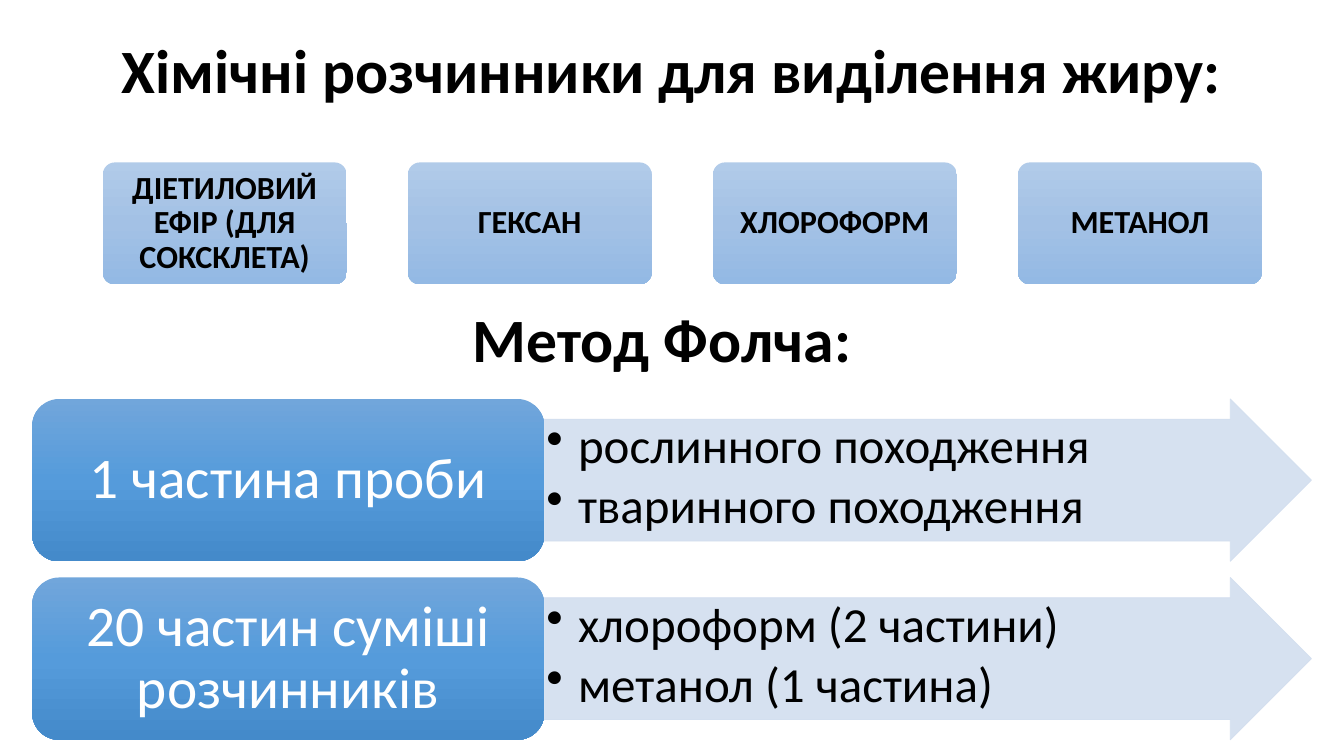
from copy import deepcopy
from lxml.etree import SubElement
from pptx import Presentation
from pptx.dml.color import RGBColor
from pptx.enum.shapes import MSO_SHAPE as Kind
from pptx.enum.text import MSO_ANCHOR as Anchor, MSO_AUTO_SIZE as Auto, PP_ALIGN as Align
from pptx.oxml.ns import qn
from pptx.util import Pt

BLACK = RGBColor(0x00, 0x00, 0x00)
WHITE = RGBColor(0xFF, 0xFF, 0xFF)
LIGHT = [RGBColor(0xB1, 0xCB, 0xE9), RGBColor(0xA3, 0xC1, 0xE5), RGBColor(0x93, 0xB9, 0xE4)]
DEEP = [RGBColor(0x71, 0xA6, 0xDB), RGBColor(0x55, 0x9B, 0xDB), RGBColor(0x44, 0x8A, 0xCA)]
PALE = RGBColor(0xD2, 0xDE, 0xEF)


def write(shape, text, size, color, bold=False, pad=(7.2, 3.6), list_gap=None):
    frame = shape.text_frame
    frame.text = text
    frame.word_wrap = True
    frame.auto_size = Auto.NONE
    frame.vertical_anchor = Anchor.MIDDLE if list_gap is None else Anchor.TOP
    frame.margin_left = frame.margin_right = Pt(pad[0])
    frame.margin_top = frame.margin_bottom = Pt(pad[1])
    for para in frame.paragraphs:
        para.alignment = Align.CENTER
        if list_gap is not None:
            para.alignment = Align.LEFT
            props = para._p.get_or_add_pPr()
            props.set("marL", str(Pt(22.5)))
            props.set("indent", str(Pt(-22.5)))
            SubElement(props, qn("a:buChar"), char="•")
            para.space_after = Pt(list_gap)
        para.line_spacing = 0.9
        for run in para.runs:
            font = run.font
            font.name, font.size, font.bold = "Calibri", Pt(size), bold
            font.color.rgb = color


def add_box(left, top, width, height, round_by, shades):
    box = slide.shapes.add_shape(Kind.ROUNDED_RECTANGLE, Pt(left), Pt(top), Pt(width), Pt(height))
    box.adjustments[0] = round_by
    box.shadow.inherit = False
    box.line.fill.background()
    box.fill.gradient()
    box.fill.gradient_angle = 270
    stops = box._element.spPr.find(qn("a:gradFill")).find(qn("a:gsLst"))
    stops.insert(1, deepcopy(stops[0]))
    for i, (stop, shade) in enumerate(zip(box.fill.gradient_stops, shades)):
        stop.position = i / 2
        stop.color.rgb = shade
    return box


deck = Presentation()
deck.slide_width, deck.slide_height = Pt(960), Pt(540)
slide = deck.slides.add_slide(deck.slide_layouts[5])

title = slide.shapes.title
title.left, title.top, title.width, title.height = Pt(66), Pt(0), Pt(828), Pt(104.4)
write(title, "Хімічні розчинники для виділення жиру:", 44, BLACK, True)

solvents = ["ДІЕТИЛОВИЙ ЕФІР (ДЛЯ СОКСКЛЕТА)", "ГЕКСАН", "ХЛОРОФОРМ", "МЕТАНОЛ"]
for i, name in enumerate(solvents):
    card = add_box(73.4 + i * 217.9, 116, 174.3, 87.1, 0.1, LIGHT)
    write(card, name, 23, BLACK, True, (3.6, 2.2))

method = slide.shapes.add_textbox(Pt(59), Pt(204.5), Pt(828), Pt(80))
write(method, "Метод Фолча:", 44, BLACK, True)

parts = [
    ("1 частина проби", "рослинного походження\nтваринного походження"),
    ("20 частин суміші розчинників", "хлороформ (2 частини)\nметанол (1 частина)"),
]
for i, (part, items) in enumerate(parts):
    top = 285 + i * 127.5
    arrow = slide.shapes.add_shape(Kind.RIGHT_ARROW, Pt(388.8), Pt(top), Pt(548), Pt(116))
    arrow.adjustments[0], arrow.adjustments[1] = 0.75, 0.5
    arrow.shadow.inherit = False
    arrow.line.width = Pt(0.5)
    for paint in (arrow.fill, arrow.line.fill):
        paint.solid()
        paint.fore_color.rgb = PALE
    for tint in arrow._element.spPr.iter(qn("a:srgbClr")):
        SubElement(tint, qn("a:alpha"), val="90000")
    write(arrow, items, 35, BLACK, pad=(1.6, 1.6), list_gap=5)

    label = add_box(23, top, 365.8, 116, 0.1667, DEEP)
    write(label, part, 41, WHITE, pad=(12.3, 6.2))

deck.save("out.pptx")
